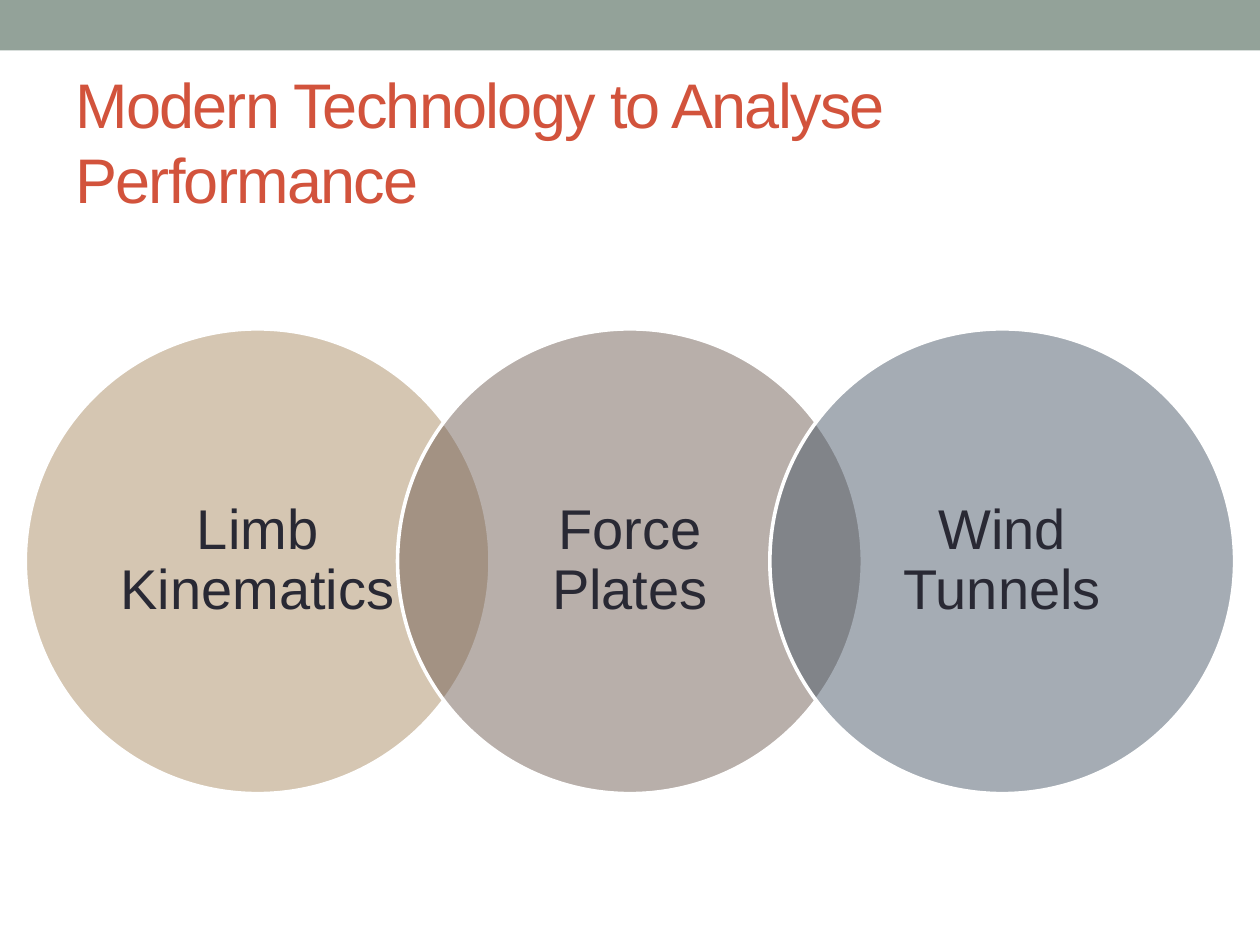
"""Build a slide with three overlapping circles naming performance analysis technologies."""
from math import sqrt

from lxml import etree
from pptx import Presentation
from pptx.dml.color import RGBColor
from pptx.enum.shapes import MSO_SHAPE
from pptx.enum.text import MSO_ANCHOR, PP_ALIGN
from pptx.oxml.ns import qn
from pptx.util import Cm, Pt

RECT, OVAL = MSO_SHAPE.RECTANGLE, MSO_SHAPE.OVAL
MIDDLE = MSO_ANCHOR.MIDDLE
LEFT, CENTER = PP_ALIGN.LEFT, PP_ALIGN.CENTER

TITLE = "Modern Technology to Analyse Performance"
CIRCLES = [
    ("Limb Kinematics", "AD8F67"),
    ("Force Plates", "726056"),
    ("Wind Tunnels", "4C5A6A"),
]
FONT = "Arial"
WIDTH, HEIGHT = 25.4, 19.05
MARGIN, TOP, DIAMETER = 0.51, 6.63, 9.37


def rgb(value):
    """Turn a hex string into a colour."""
    return RGBColor.from_string(value)


def add_filled(shapes, kind, box, color):
    """Add a plain filled shape without line or shadow."""
    sp = shapes.add_shape(kind, *map(Cm, box))
    sp.shadow.inherit = False
    sp.fill.solid()
    sp.fill.fore_color.rgb = rgb(color)
    sp.line.fill.background()
    return sp


def add_text(shapes, box, text, size, color, align, insets):
    """Add a wrapped, vertically centred text box and return its paragraph."""
    tf = shapes.add_textbox(*map(Cm, box)).text_frame
    tf.word_wrap = True
    tf.vertical_anchor = MIDDLE
    tf.margin_left = tf.margin_right = Cm(insets[0])
    tf.margin_top = tf.margin_bottom = Cm(insets[1])
    tf.text = text
    p = tf.paragraphs[0]
    p.alignment = align
    font = p.runs[0].font
    font.name, font.size = FONT, Pt(size)
    font.color.rgb = rgb(color)
    return p


def add_circle(shapes, left, label, color):
    """Add a half transparent circle with its label in the inscribed square."""
    sp = add_filled(shapes, OVAL, (left, TOP, DIAMETER, DIAMETER), color)
    sp.line.color.rgb = rgb("FFFFFF")
    sp.line.width = Pt(2.08)
    clr = sp.fill._xPr.find(qn("a:solidFill"))[0]
    etree.SubElement(clr, qn("a:alpha")).set("val", "50000")
    side = DIAMETER / sqrt(2)
    inset = (DIAMETER - side) / 2
    box = (left + inset, TOP + inset, side, side)
    p = add_text(shapes, box, label, 32, "292934", CENTER, (0.51, 0.1))
    p.line_spacing = 0.9


def main():
    """Create and save the presentation."""
    prs = Presentation()
    prs.slide_width, prs.slide_height = Cm(WIDTH), Cm(HEIGHT)
    s = prs.slides.add_slide(prs.slide_layouts[6])

    add_filled(s.shapes, RECT, (0, 0, WIDTH, 1.02), "93A299")
    p = add_text(s.shapes, (1.27, 1.47, 22.86, 2.74), TITLE, 36, "D2533C", LEFT, (0.25, 0.13))
    p.runs[0].font._element.set("spc", "-100")

    group = s.shapes.add_group_shape()
    step = (WIDTH - 2 * MARGIN - DIAMETER) / (len(CIRCLES) - 1)
    for i, (label, color) in enumerate(CIRCLES):
        add_circle(group.shapes, MARGIN + i * step, label, color)

    prs.save("out.pptx")


if __name__ == "__main__":
    main()
